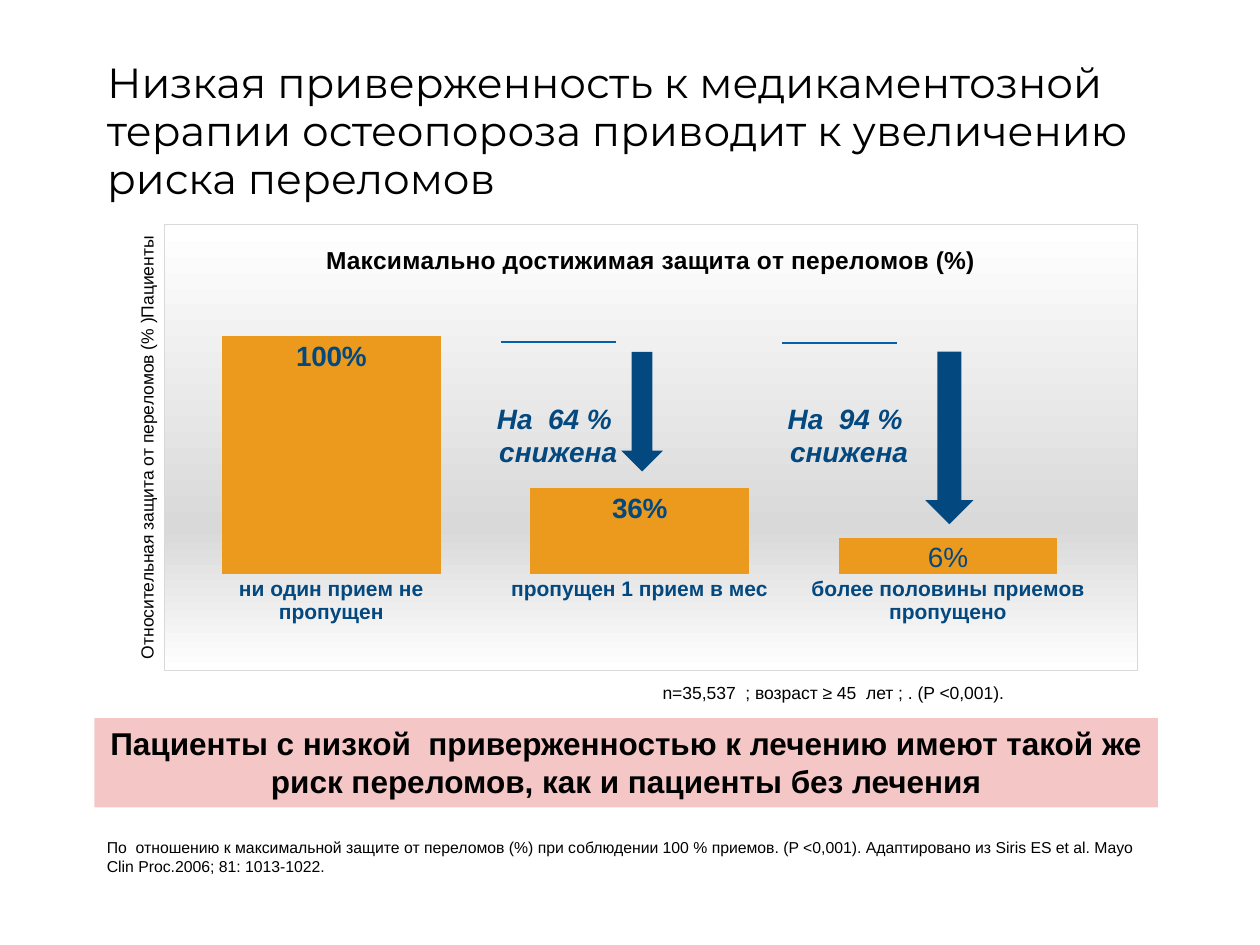
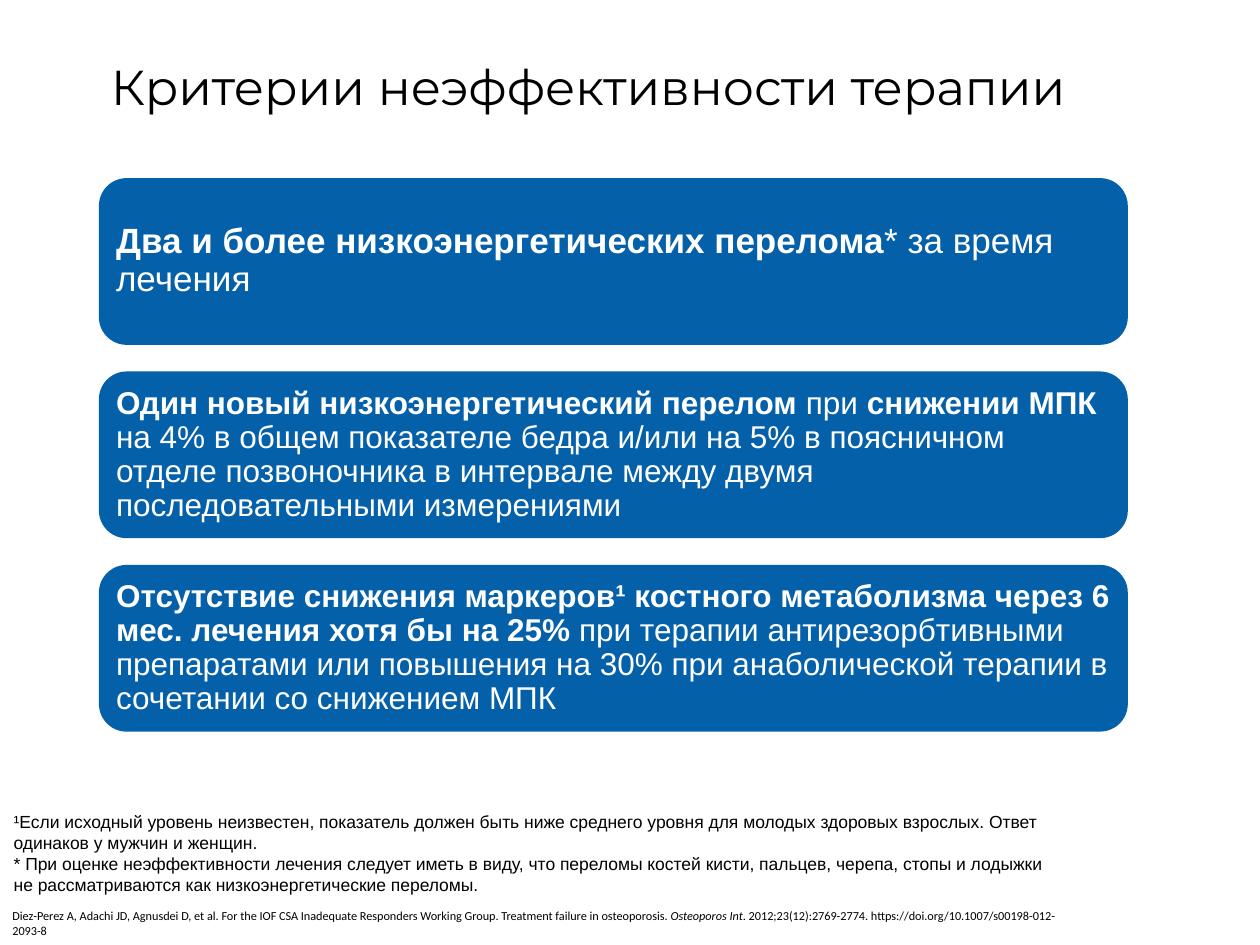
import pptx
import pptx.chart.data
import pptx.dml.color
import pptx.enum.chart
import pptx.enum.shapes
import pptx.enum.text
import pptx.oxml
import pptx.oxml.ns
import pptx.util
from pptx.util import Pt

BLACK, WHITE = "000000", "FFFFFF"
NAVY, BLUE = "03487F", "0460A9"
ORANGE, PINK, GREY = "EC9A1E", "F4C7C6", "D9D9D9"
BODY_FONT, TITLE_FONT, SOURCE_FONT = "Arial", "Montserrat", "Calibri"
ALIGN = pptx.enum.text.PP_ALIGN
ANCHOR = pptx.enum.text.MSO_ANCHOR
SHAPE = pptx.enum.shapes.MSO_SHAPE
CHART = pptx.enum.chart


def color(hex_string):
    """Turn a hex string into a colour."""
    return pptx.dml.color.RGBColor.from_string(hex_string)


def style_font(font, size, hex_string=BLACK, bold=False, italic=False, name=BODY_FONT):
    """Format one font."""
    font.name, font.size, font.bold, font.italic = name, Pt(size), bold, italic
    font.color.rgb = color(hex_string)


class Deck:
    """Holds the presentation style and the current slide."""

    def __init__(self):
        """Start an empty 10 by 7.5 inch presentation."""
        self.presentation = pptx.Presentation()
        self.presentation.slide_width = Pt(720)
        self.presentation.slide_height = Pt(540)
        self.slide = None

    def fill_text(self, frame, paragraphs, size, hex_string=BLACK, bold=False, italic=False,
                  name=BODY_FONT, align=ALIGN.LEFT, anchor=ANCHOR.TOP, spacing=None, wrap=True):
        """Fill a frame; a paragraph is a string or a list of (text, emphasis) parts."""
        frame.word_wrap, frame.vertical_anchor = wrap, anchor
        frame.auto_size = pptx.enum.text.MSO_AUTO_SIZE.NONE
        for index, content in enumerate(paragraphs):
            paragraph = frame.add_paragraph() if index else frame.paragraphs[0]
            paragraph.alignment = align
            if spacing:
                paragraph.line_spacing = spacing
            parts = [(content, "")] if isinstance(content, str) else content
            for text, emphasis in parts:
                run = paragraph.add_run()
                run.text = text
                style_font(run.font, size, hex_string, bold or emphasis == "bold",
                           italic or emphasis == "italic", name)

    def titled_slide(self, title, box, size, spacing=None):
        """Add a slide and place its title."""
        self.slide = self.presentation.slides.add_slide(self.presentation.slide_layouts[5])
        heading = self.slide.shapes.title
        heading.left, heading.top, heading.width, heading.height = map(Pt, box)
        self.fill_text(heading.text_frame, [title], size, name=TITLE_FONT, spacing=spacing)

    def text(self, box, paragraphs, size, rotation=0, **style):
        """Add a text box."""
        label = self.slide.shapes.add_textbox(*map(Pt, box))
        label.rotation = rotation
        self.fill_text(label.text_frame, paragraphs, size, **style)

    def shape(self, kind, box, fill):
        """Add a flat preset shape without outline."""
        figure = self.slide.shapes.add_shape(kind, *map(Pt, box))
        figure.shadow.inherit = False
        figure.fill.solid()
        figure.fill.fore_color.rgb = color(fill)
        figure.line.fill.background()
        return figure

    def line(self, left, right, y):
        """Add a thin horizontal line."""
        rule = self.slide.shapes.add_connector(
            pptx.enum.shapes.MSO_CONNECTOR.STRAIGHT, Pt(left), Pt(y), Pt(right), Pt(y))
        rule.line.color.rgb = color(BLUE)
        rule.line.width = Pt(1)
        rule._element.spPr.append(pptx.oxml.parse_xml(
            f'<a:effectLst {pptx.oxml.ns.nsdecls("a")}/>'))

    def column_chart(self, box, title, categories, values):
        """Add the column chart and return its only series."""
        data = pptx.chart.data.CategoryChartData(number_format="0%")
        data.categories = categories
        data.add_series("Series 1", values)
        chart = self.slide.shapes.add_chart(
            CHART.XL_CHART_TYPE.COLUMN_CLUSTERED, *map(Pt, box), data).chart
        style_font(chart.font, 10)
        chart.has_legend = False
        chart.has_title = True
        chart.chart_title.text_frame.text = title
        style_font(chart.chart_title.text_frame.paragraphs[0].runs[0].font, 14, bold=True)

        scale = chart.value_axis
        scale.minimum_scale, scale.maximum_scale = 0, 1.2
        scale.has_major_gridlines = False
        scale.visible = False
        groups = chart.category_axis
        groups.major_tick_mark = CHART.XL_TICK_MARK.NONE
        groups.format.line.fill.background()
        style_font(groups.tick_labels.font, 12, NAVY, bold=True)

        plot = chart.plots[0]
        plot.gap_width = 41
        plot.vary_by_categories = False
        series = plot.series[0]
        series.format.fill.solid()
        series.format.fill.fore_color.rgb = color(ORANGE)
        labels = series.data_labels
        labels.show_value = True
        labels.number_format, labels.number_format_is_linked = "0%", False
        labels.position = CHART.XL_LABEL_POSITION.INSIDE_END
        style_font(labels.font, 16, NAVY, bold=True)
        self.chart_area(chart)
        return series

    def chart_area(self, chart):
        """Give the chart its gradient, border and inner plot position."""
        stops = "".join(f'<a:gs pos="{place * 1000}"><a:srgbClr val="{shade}"/></a:gs>'
                        for place, shade in ((0, WHITE), (68, GREY), (100, WHITE)))
        chart_space = chart._chartSpace
        chart_space.chart.addnext(pptx.oxml.parse_xml(
            f'<c:spPr {pptx.oxml.ns.nsdecls("c", "a")}><a:gradFill><a:gsLst>{stops}</a:gsLst>'
            f'<a:lin ang="5400000" scaled="0"/></a:gradFill><a:ln w="9525"><a:solidFill>'
            f'<a:srgbClr val="{GREY}"/></a:solidFill></a:ln></c:spPr>'))
        plot_area = chart_space.chart.plotArea
        for layout in plot_area.findall(pptx.oxml.ns.qn("c:layout")):
            plot_area.remove(layout)
        sizes = "".join(f'<c:{key} val="{value}"/>' for key, value in
                        (("x", 0.013), ("y", 0.144), ("w", 0.951), ("h", 0.639)))
        plot_area.insert(0, pptx.oxml.parse_xml(
            f'<c:layout {pptx.oxml.ns.nsdecls("c")}><c:manualLayout><c:layoutTarget val="inner"/>'
            f'<c:xMode val="edge"/><c:yMode val="edge"/>{sizes}</c:manualLayout></c:layout>'))


def adherence_slide(deck):
    """Build the slide on adherence and fracture risk."""
    deck.titled_slide("Низкая приверженность к медикаментозной терапии остеопороза "
                      "приводит к увеличению риска переломов", (54, 31, 626.4, 75.6), 24, 0.95)
    protection = deck.column_chart(
        (93.6, 128, 556.6, 255.6), "Максимально достижимая защита от переломов (%)",
        ["ни один прием не пропущен", "пропущен 1 прием в мес",
         "более половины приемов пропущено"], [1, 0.36, 0.15])
    lowest = protection.points[2].data_label
    lowest.text_frame.text = "6%"
    style_font(lowest.text_frame.paragraphs[0].runs[0].font, 16, NAVY)
    lowest.position = CHART.XL_LABEL_POSITION.INSIDE_END

    reductions = (("На  64 %  снижена", 275.8, 286.5, 195.5, (355, 201, 23.8, 68.4)),
                  ("На  94 %  снижена", 442, 447.1, 196.2, (528.8, 201, 27.4, 98.6)))
    for reduction, left, line_left, line_y, arrow in reductions:
        deck.text((left, 226.8, 86.4, 43.2), [reduction], 16, hex_string=NAVY, bold=True,
                  italic=True, align=ALIGN.CENTER, anchor=ANCHOR.MIDDLE)
        deck.line(line_left, line_left + 65.5, line_y)
        deck.shape(SHAPE.DOWN_ARROW, arrow, NAVY)

    deck.text((-47.5, 242.6, 262.8, 19.4), ["Относительная защита от переломов (% )Пациенты"],
              10, rotation=270, wrap=False)
    deck.text((371.5, 386, 217.4, 19.4), ["n=35,537  ; возраст ≥ 45  лет ; . (P <0,001)."],
              10, wrap=False)
    conclusion = deck.shape(SHAPE.RECTANGLE, (54, 410.4, 607.7, 51), PINK)
    deck.fill_text(conclusion.text_frame,
                   ["Пациенты с низкой  приверженностью к лечению имеют такой же риск "
                    "переломов, как и пациенты без лечения"], 18, bold=True, align=ALIGN.CENTER)
    deck.text((54, 475.2, 609.8, 28.8),
              ["По  отношению к максимальной защите от переломов (%) при соблюдении 100 % приемов. "
               "(P <0,001). Адаптировано из Siris ES et al. Mayo Clin Proc.2006; 81: 1013-1022."], 9)


def criteria_slide(deck):
    """Build the slide on criteria of treatment failure."""
    deck.titled_slide("Критерии неэффективности терапии", (56.2, 28.8, 610.6, 41), 28)
    criteria = (
        (20, [("Два и более низкоэнергетических перелома", "bold"), ("* за время лечения", "")]),
        (18, [("Один новый низкоэнергетический перелом ", "bold"), ("при ", ""),
              ("снижении МПК ", "bold"),
              ("на 4% в общем показателе бедра и/или на 5% в поясничном отделе позвоночника "
               "в интервале между двумя последовательными измерениями", "")]),
        (18, [("Отсутствие снижения маркеров¹ костного метаболизма через 6 мес. лечения "
               "хотя бы на 25%", "bold"),
              (" при терапии антирезорбтивными препаратами или повышения на 30% при "
               "анаболической терапии в сочетании со снижением МПК", "")]))
    for row, (size, criterion) in enumerate(criteria):
        card = deck.shape(SHAPE.ROUNDED_RECTANGLE, (56.5, 101.8 + 110.5 * row, 588, 95.3), BLUE)
        frame = card.text_frame
        frame.margin_left = frame.margin_right = Pt(5.2)
        frame.margin_top = frame.margin_bottom = Pt(0)
        deck.fill_text(frame, [criterion], size, hex_string=WHITE, anchor=ANCHOR.MIDDLE,
                       spacing=0.9)

    deck.text((0.7, 460, 611.3, 55.4),
              ["¹Если исходный уровень неизвестен, показатель должен быть ниже среднего уровня "
               "для молодых здоровых взрослых. Ответ одинаков у мужчин и женщин.",
               "* При оценке неэффективности лечения следует иметь в виду, что переломы костей "
               "кисти, пальцев, черепа, стопы и лодыжки не рассматриваются как "
               "низкоэнергетические переломы."], 10)
    deck.text((0, 515.5, 612, 24.5),
              [[("Diez-Perez А, Adachi JD, Agnusdei D, et al. For the IOF CSA Inadequate Responders "
                 "Working Group. Treatment failure in osteoporosis. ", ""),
                ("Osteoporos Int", "italic"),
                (". 2012;23(12):2769-2774. https://doi.org/10.1007/s00198-012-2093-8", "")]],
              7, name=SOURCE_FONT)


def main():
    """Build and save both slides."""
    deck = Deck()
    adherence_slide(deck)
    criteria_slide(deck)
    deck.presentation.save("out.pptx")


if __name__ == "__main__":
    main()
